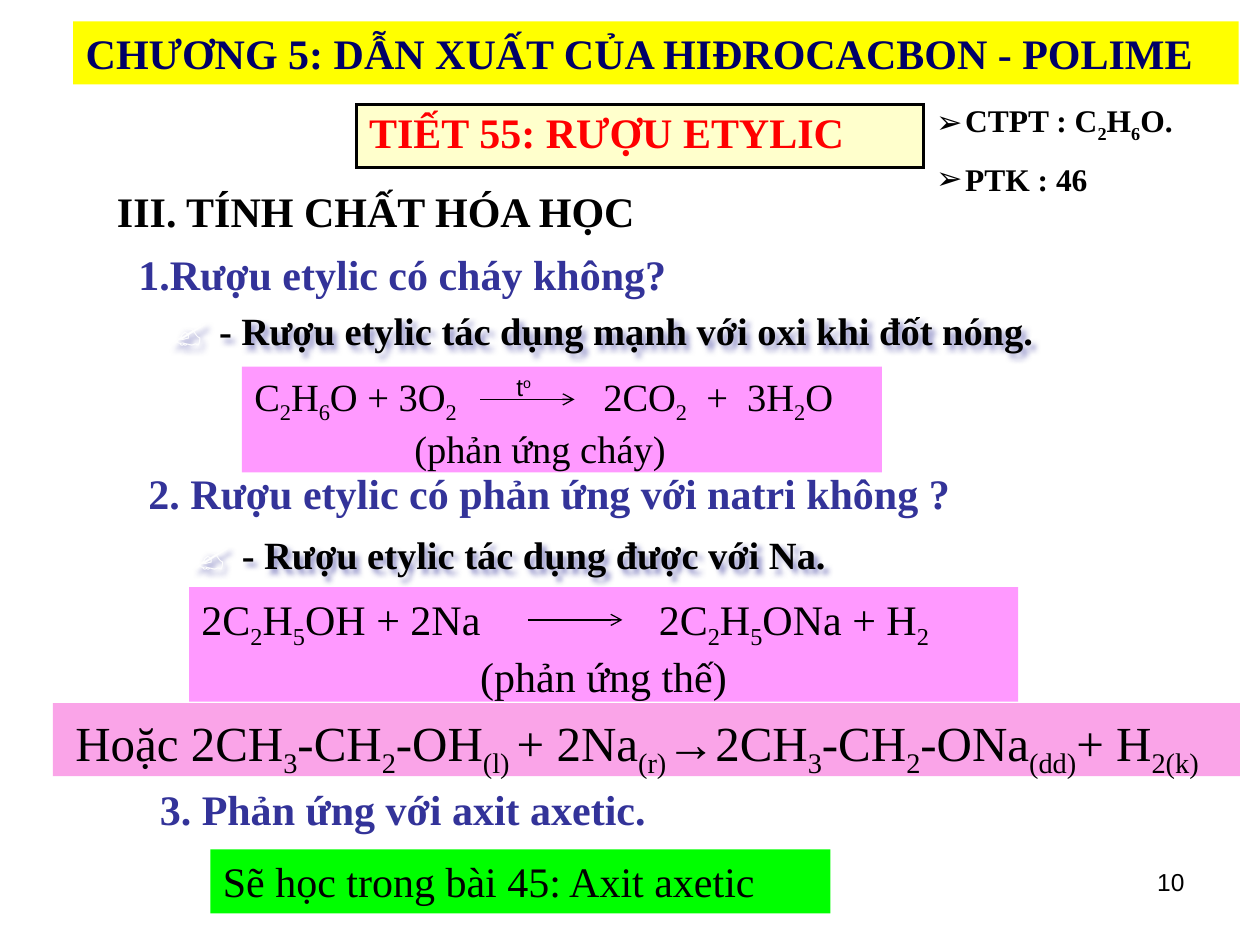
from pptx import Presentation, util as u
from pptx.dml import color
from pptx.enum import shapes, text
from pptx.oxml import ns, xmlchemy

SERIF = "Times New Roman"
PINK, BLUE, BLACK = "FF99FF", "333399", "000000"


def rgb(value):
    """Turn a hex string into a colour."""
    return color.RGBColor.from_string(value)


def add_child(parent, tag, **attributes):
    """Append an XML element with attributes and return it."""
    child = xmlchemy.OxmlElement(tag)
    for name, value in attributes.items():
        child.set(name, str(value))
    parent.append(child)
    return child


def add_solid_fill(parent, value):
    """Append a solid fill and return its colour element."""
    return add_child(add_child(parent, "a:solidFill"), "a:srgbClr", val=value)


def place(shape, box):
    """Move and size a shape to a box in inches."""
    shape.left, shape.top, shape.width, shape.height = map(u.Inches, box)


def add_run(paragraph, words, size, value=BLACK, bold=False, font=SERIF):
    """Add one formatted run."""
    run = paragraph.add_run()
    run.text = words
    run.font.name, run.font.size, run.font.bold = font, u.Pt(size), bold
    run.font.color.rgb = rgb(value)
    return run


def write(paragraph, words, size, value=BLACK, bold=False, font=SERIF, baseline=-25000):
    """Write words whose parts between underscores are shifted off the baseline."""
    for index, part in enumerate(words.split("_")):
        if part:
            run = add_run(paragraph, part, size, value, bold, font)
            if index % 2:
                run.font._element.set("baseline", str(baseline))


def prepare(frame, anchor=text.MSO_ANCHOR.TOP):
    """Set wrapping, fixed size and anchor, and return the first paragraph."""
    frame.word_wrap = True
    frame.auto_size = text.MSO_AUTO_SIZE.NONE
    frame.vertical_anchor = anchor
    paragraph = frame.paragraphs[0]
    paragraph.alignment = text.PP_ALIGN.LEFT
    return paragraph


def add_text(slide, box, words, size, **style):
    """Add a one-paragraph text box and return its paragraph."""
    shape = slide.shapes.add_textbox(*map(u.Inches, box))
    paragraph = prepare(shape.text_frame)
    write(paragraph, words, size, **style)
    return paragraph


def add_panel(slide, box, fill):
    """Add a filled rectangle without outline."""
    shape = slide.shapes.add_shape(shapes.MSO_SHAPE.RECTANGLE, *map(u.Inches, box))
    shape.shadow.inherit = False
    shape.fill.solid()
    shape.fill.fore_color.rgb = rgb(fill)
    shape.line.fill.background()
    return shape


def add_chapter_title(slide, box):
    """Fill the title placeholder with the chapter name."""
    title = slide.shapes.title
    place(title, box)
    title.fill.solid()
    title.fill.fore_color.rgb = rgb("FFFF00")
    paragraph = prepare(title.text_frame, text.MSO_ANCHOR.MIDDLE)
    write(paragraph, "CHƯƠNG 5: DẪN XUẤT CỦA HIĐROCACBON - POLIME", 24, "000066", True)


def add_lesson_table(slide, box):
    """Add the bordered one-cell table with the lesson name."""
    table = slide.shapes.add_table(1, 1, *map(u.Inches, box)).table
    table.first_row = table.horz_banding = False
    cell = table.cell(0, 0)
    properties = cell._tc.get_or_add_tcPr()
    for side in ("L", "R", "T", "B"):
        add_solid_fill(add_child(properties, f"a:ln{side}", w=u.Pt(1.5)), BLACK)
    cell.fill.solid()
    cell.fill.fore_color.rgb = rgb("FFFFCC")
    write(cell.text_frame.paragraphs[0], "TIẾT 55: RƯỢU ETYLIC", 24, "FF0000", True)


def add_formula_list(slide, box):
    """Fill the body placeholder with the formula and the molecular mass."""
    body = slide.placeholders[1]
    place(body, box)
    frame = body.text_frame
    first = prepare(frame)
    lines = ("CTPT : C_2_H_6_O.", first, 0), ("PTK : 46", frame.add_paragraph(), 9)
    for words, paragraph, gap in lines:
        paragraph.space_before = u.Pt(gap)
        properties = paragraph._p.get_or_add_pPr()
        properties.set("marL", str(u.Inches(0.23)))
        properties.set("indent", str(-u.Inches(0.23)))
        add_child(properties, "a:buFont", typeface="Arial")
        add_child(properties, "a:buChar", char="➢")
        write(paragraph, words, 18, bold=True)


def add_remark(slide, box, words):
    """Add a shadowed remark led by a writing hand."""
    shape = slide.shapes.add_textbox(*map(u.Inches, box))
    effects = add_child(shape._element.spPr, "a:effectLst")
    shadow = add_child(effects, "a:outerShdw", blurRad=u.Pt(3), dist=u.Pt(3), dir=2700000)
    add_child(add_child(shadow, "a:srgbClr", val=BLUE), "a:alpha", val=50000)
    paragraph = prepare(shape.text_frame)
    hand = add_run(paragraph, "✍ ", 24, "FEFEFE")
    hand.font._element.set("spc", "50")
    outline = xmlchemy.OxmlElement("a:ln")
    outline.set("w", str(u.Pt(1)))
    add_solid_fill(outline, "C00000")
    hand.font._element.insert(0, outline)
    add_run(paragraph, words, 22, bold=True)


def add_reaction(slide, box, sides, caption, size, tab, arrow_left, caption_margin=0):
    """Add an equation panel with an arrow between its sides and a caption."""
    frame = add_panel(slide, box, PINK).text_frame
    equation = prepare(frame)
    tabs = add_child(equation._p.get_or_add_pPr(), "a:tabLst")
    add_child(tabs, "a:tab", pos=u.Inches(tab), algn="l")
    write(equation, "\t".join(sides), size)
    note = frame.add_paragraph()
    note.alignment = text.PP_ALIGN.CENTER
    note._p.get_or_add_pPr().set("marR", str(u.Inches(caption_margin)))
    write(note, caption, size)
    left, middle = u.Inches(arrow_left), u.Inches(box[1] + 0.26)
    arrow = slide.shapes.add_connector(
        shapes.MSO_CONNECTOR.STRAIGHT, left, middle, left + u.Inches(0.75), middle)
    arrow.line.color.rgb = rgb(BLACK)
    arrow.line.width = u.Pt(0.75)
    add_child(arrow.line._get_or_add_ln(), "a:tailEnd", type="arrow")
    add_child(arrow._element.find(ns.qn("p:spPr")), "a:effectLst")


def add_structural_equation(slide, box):
    """Add the equation in structural formulas on its band."""
    left, top, width, height = box
    add_panel(slide, box, "FAA4E8")
    words = ("Hoặc 2CH_3_-CH_2_-OH_(l) _+ 2Na_(r)_→2CH_3_-CH_2_-ONa_(dd)_+ H_2(k)_")
    paragraph = add_text(slide, (left + 0.08, top - 0.08, width + 0.27, height + 0.09), words, 28)
    paragraph.line_spacing = 1.2


def add_closing_note(slide, box):
    """Add the green note about the later lesson."""
    paragraph = prepare(add_panel(slide, box, "00FF00").text_frame)
    write(paragraph, "Sẽ học trong bài 45: Axit axetic", 24)


def main():
    """Build and save the slide."""
    presentation = Presentation()
    presentation.slide_width, presentation.slide_height = u.Inches(10), u.Inches(7.5)
    slide = presentation.slides.add_slide(presentation.slide_layouts[1])
    add_chapter_title(slide, (0.58, 0.17, 9.25, 0.5))
    add_lesson_table(slide, (2.83, 0.83, 4.5, 0.5))
    add_formula_list(slide, (7.33, 0.75, 2.33, 1.16))
    headings = (
        ((0.83, 1.42, 5.92, 0.51), "III. TÍNH CHẤT HÓA HỌC", BLACK),
        ((1, 1.92, 5, 0.51), "1.Rượu etylic có cháy không?", BLUE),
        ((1.08, 3.66, 7.25, 0.51), "2. Rượu etylic có phản ứng với natri không ?", BLUE),
        ((1.17, 6.17, 7, 0.51), "3. Phản ứng với axit axetic.", BLUE),
    )
    for box, words, value in headings:
        add_text(slide, box, words, 24, value=value, bold=True)
    add_remark(slide, (1.24, 2.36, 7.1, 0.5), "- Rượu etylic tác dụng mạnh với oxi khi đốt nóng.")
    add_reaction(slide, (1.92, 2.91, 5.08, 0.84), ("C_2_H_6_O + 3O_2_", "2CO_2_  +  3H_2_O"),
                 "(phản ứng cháy)", 22, 2.77, 3.81, 0.35)
    add_text(slide, (4, 2.9, 0.42, 0.34), "t_o_", 14, font="Arial", baseline=30000)
    add_remark(slide, (1.42, 4.14, 5.92, 0.5), "- Rượu etylic tác dụng được với Na.")
    add_reaction(slide, (1.5, 4.66, 6.58, 0.91), ("2C_2_H_5_OH + 2Na", "2C_2_H_5_ONa + H_2_"),
                 "(phản ứng thế)", 24, 3.63, 4.19)
    add_structural_equation(slide, (0.42, 5.58, 9.42, 0.58))
    add_closing_note(slide, (1.67, 6.74, 4.92, 0.51))
    number = add_text(slide, (7.17, 6.83, 2.33, 0.52), "10", 14, font="Arial")
    number.alignment = text.PP_ALIGN.RIGHT
    presentation.save("out.pptx")


if __name__ == "__main__":
    main()
